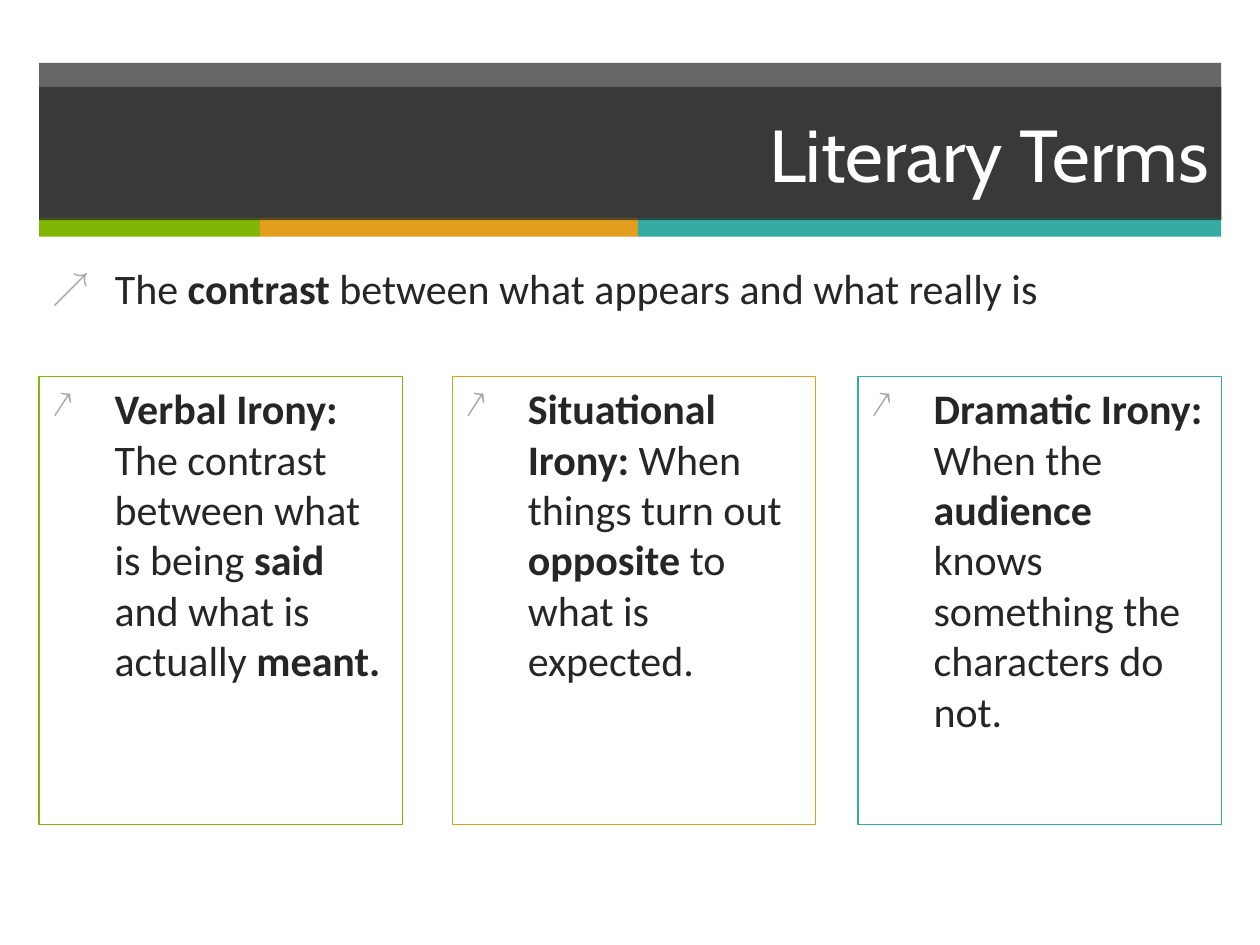
from typing import NamedTuple

from lxml import etree
from pptx import Presentation
from pptx.dml.color import RGBColor
from pptx.enum import shapes, text
from pptx.oxml import ns
from pptx.util import Cm, Pt

DARK = "262626"
LEFT = 0.79
WIDE = 23.83


class Bar(NamedTuple):
    width: float
    tint: str


class Card(NamedTuple):
    left: float
    tint: str
    words: str


BARS = [Bar(4.45, "80B606"), Bar(7.62, "E29F1D"), Bar(11.76, "35ACA2")]
CARDS = [
    Card(LEFT, "80B606", "|Verbal Irony:|\vThe contrast between what is being "
         "|said |and what is actually |meant.|"),
    Card(9.12, "E29F1D", "|Situational Irony: |When things turn out "
         "|opposite |to what is expected."),
    Card(17.3, "35ACA2", "|Dramatic Irony: |When the |audience |"
         "knows something the characters do not."),
]
INTRO = "The |contrast |between what appears and what really is"


def rgb(tint: str) -> RGBColor:
    return RGBColor.from_string(tint)


def place(item, left: float, top: float, width: float, height: float) -> None:
    item.left, item.top = Cm(left), Cm(top)
    item.width, item.height = Cm(width), Cm(height)


def paint(item, tint: str, alpha: int = 100) -> None:
    item.fill.solid()
    item.fill.fore_color.rgb = rgb(tint)
    if alpha < 100:
        node = item.fill._xPr.find(".//" + ns.qn("a:srgbClr"))
        etree.SubElement(node, ns.qn("a:alpha"), val=str(alpha * 1000))


def box(slide, left: float, top: float, width: float, height: float):
    item = slide.shapes.add_shape(
        shapes.MSO_SHAPE.RECTANGLE, Cm(left), Cm(top), Cm(width), Cm(height))
    item.shadow.inherit = False
    item.line.fill.background()
    return item


def bullet(para) -> None:
    props = para._p.get_or_add_pPr()
    props.set("marL", str(Cm(1.27)))
    props.set("indent", str(-Cm(1.27)))
    tint = etree.SubElement(props, ns.qn("a:buClr"))
    etree.SubElement(tint, ns.qn("a:srgbClr"), val="A6A6A6")
    etree.SubElement(props, ns.qn("a:buSzPct"), val="90000")
    etree.SubElement(props, ns.qn("a:buChar"), char="↗")


def write(item, words: str) -> None:
    frame = item.text_frame
    frame.word_wrap = True
    frame.vertical_anchor = text.MSO_ANCHOR.TOP
    para = frame.paragraphs[0]
    para.alignment = text.PP_ALIGN.LEFT
    para.space_before = Pt(20)
    bullet(para)
    for spot, part in enumerate(words.split("|")):
        if part.startswith("\v"):
            para.add_line_break()
        if part:
            run = para.add_run()
            run.text = part.lstrip("\v")
            style(run.font, "Calibri", 24, DARK)
            run.font.bold = spot % 2 == 1


def style(font, name: str, size: int, tint: str) -> None:
    font.name, font.size = name, Pt(size)
    font.color.rgb = rgb(tint)


def head(slide) -> None:
    paint(box(slide, LEFT, 1.27, WIDE, 3.15), DARK, 70)
    left = LEFT
    for bar in BARS:
        paint(box(slide, left, 4.39, bar.width, 0.38), bar.tint)
        left += bar.width
    title = slide.shapes.title
    slide.shapes._spTree.append(title._element)
    place(title, LEFT, 1.75, WIDE, 2.69)
    paint(title, DARK, 70)
    title.text_frame.text = "Literary Terms"
    title.text_frame.vertical_anchor = text.MSO_ANCHOR.MIDDLE
    para = title.text_frame.paragraphs[0]
    para.alignment = text.PP_ALIGN.RIGHT
    style(para.runs[0].font, "Cabin", 42, "FFFFFF")


def main() -> None:
    deck = Presentation()
    deck.slide_width, deck.slide_height = Cm(25.4), Cm(19.05)
    slide = deck.slides.add_slide(deck.slide_layouts[1])
    head(slide)
    body = slide.placeholders[1]
    place(body, LEFT, 5.16, WIDE, 1.73)
    write(body, INTRO)
    for card in CARDS:
        item = box(slide, card.left, 7.59, 7.32, 9.04)
        item.fill.background()
        item.line.color.rgb = rgb(card.tint)
        item.line.width = Pt(0.75)
        write(item, card.words)
    deck.save("out.pptx")


if __name__ == "__main__":
    main()
